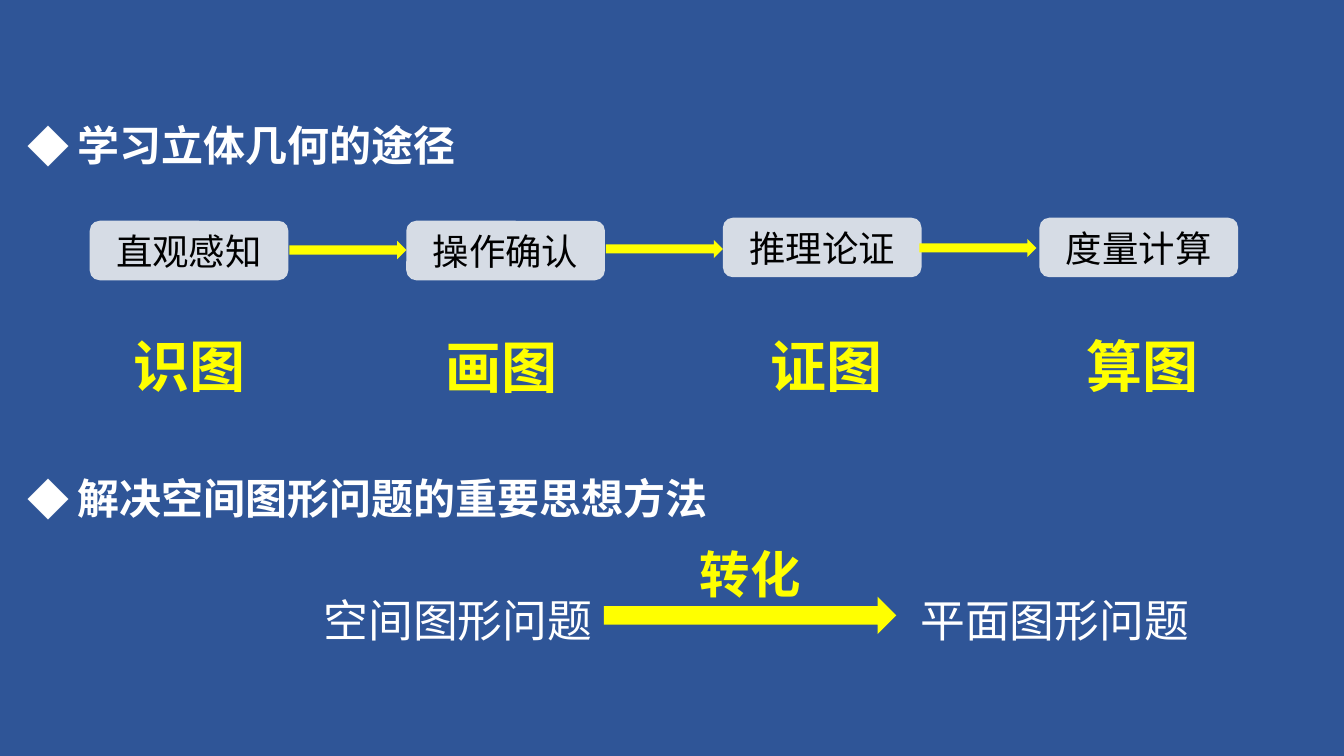
from lxml import etree
from pptx import Presentation
from pptx.dml.color import RGBColor
from pptx.enum.shapes import MSO_SHAPE
from pptx.enum.text import MSO_ANCHOR, MSO_AUTO_SIZE, PP_ALIGN
from pptx.oxml.ns import qn
from pptx.util import Inches, Pt

ROUNDED = MSO_SHAPE.ROUNDED_RECTANGLE
ARROW = MSO_SHAPE.RIGHT_ARROW
CENTER, LEFT = PP_ALIGN.CENTER, PP_ALIGN.LEFT
MIDDLE, TOP = MSO_ANCHOR.MIDDLE, MSO_ANCHOR.TOP
FIT_SHAPE = MSO_AUTO_SIZE.SHAPE_TO_FIT_TEXT

BLUE, GRAY, YELLOW = "2F5597", "D6DCE5", "FFFF00"
WHITE, BLACK, ORANGE = "FFFFFF", "000000", "ED7D31"

STEP_LEFT, STEP_PITCH = 0.89, 3.14
STEP_WIDTH, STEP_HEIGHT = 1.97, 0.59
STEPS = [("直观感知", 2.19), ("操作确认", 2.19), ("推理论证", 2.16), ("度量计算", 2.16)]
STEP_ARROWS = [(2.87, 2.39), (6.01, 2.38), (9.12, 2.37)]
SKILLS = [("识图", 1.22, 3.24), ("画图", 4.31, 3.25), ("证图", 7.54, 3.24), ("算图", 10.67, 3.24)]
HEADINGS = [("学习立体几何的途径", 0.88, 4.67), ("解决空间图形问题的重要思想方法", 4.38, 7.36)]
PROBLEMS = [("空间图形问题", 3.11), ("平面图形问题", 9.03)]


def color(value):
    return RGBColor.from_string(value)


class SlideBuilder:
    font_name = "Noto Sans CJK SC"

    def __init__(self, slide):
        self.slide = slide

    def background(self, fill):
        background_fill = self.slide.background.fill
        background_fill.solid()
        background_fill.fore_color.rgb = color(fill)

    def fill_text(self, shape, text, size, font_color, bold=False, **paragraph_format):
        paragraph = shape.text_frame.paragraphs[0]
        for name, value in paragraph_format.items():
            setattr(paragraph, name, value)
        run = paragraph.add_run()
        run.text = text
        font = run.font
        for name, value in {"name": self.font_name, "size": Pt(size), "bold": bold}.items():
            setattr(font, name, value)
        font.color.rgb = color(font_color)
        properties = run._r.get_or_add_rPr()
        etree.SubElement(properties, qn("a:ea"), typeface=self.font_name)
        return paragraph, properties

    def shape(self, kind, left, top, width, height, fill):
        shape = self.slide.shapes.add_shape(
            kind, Inches(left), Inches(top), Inches(width), Inches(height))
        shape.shadow.inherit = False
        shape.fill.solid()
        shape.fill.fore_color.rgb = color(fill)
        shape.line.fill.background()
        return shape

    def step(self, text, left, top):
        shape = self.shape(ROUNDED, left, top, STEP_WIDTH, STEP_HEIGHT, GRAY)
        shape.text_frame.vertical_anchor = MIDDLE
        self.fill_text(shape, text, 26, BLACK, alignment=CENTER)

    def text(self, text, left, top, width, height, size, font_color,
             bold=False, anchor=TOP, wrap=False, **paragraph_format):
        box = self.slide.shapes.add_textbox(
            Inches(left), Inches(top), Inches(width), Inches(height))
        frame_format = {"word_wrap": wrap, "auto_size": FIT_SHAPE, "vertical_anchor": anchor}
        for name, value in frame_format.items():
            setattr(box.text_frame, name, value)
        return self.fill_text(box, text, size, font_color, bold, **paragraph_format)

    def heading(self, text, top, width):
        paragraph, _ = self.text(text, 0.17, top, width, 0.86, 30, WHITE, bold=True,
                                 anchor=MIDDLE, wrap=True, alignment=LEFT, line_spacing=1.5)
        properties = paragraph._p.get_or_add_pPr()
        properties.set("marL", str(Inches(0.5)))
        properties.set("indent", str(Inches(-0.5)))
        etree.SubElement(properties, qn("a:buFont"), typeface=self.font_name)
        etree.SubElement(properties, qn("a:buChar"), char="◆")

    def skill(self, text, left, top):
        _, properties = self.text(text, left, top, 1.32, 0.77, 40, YELLOW,
                                  bold=True, alignment=CENTER)
        outline = etree.Element(qn("a:ln"), w=str(Pt(0.52)))
        fill = etree.SubElement(outline, qn("a:solidFill"))
        etree.SubElement(fill, qn("a:srgbClr"), val=ORANGE)
        properties.insert(0, outline)


def main():
    presentation = Presentation()
    presentation.slide_width = Inches(13.33)
    presentation.slide_height = Inches(7.5)
    builder = SlideBuilder(presentation.slides.add_slide(presentation.slide_layouts[6]))
    builder.background(BLUE)

    for text, top, width in HEADINGS:
        builder.heading(text, top, width)
    for index, (text, top) in enumerate(STEPS):
        builder.step(text, STEP_LEFT + index * STEP_PITCH, top)
    for left, top in STEP_ARROWS:
        builder.shape(ARROW, left, top, 1.16, 0.18, YELLOW)
    for text, left, top in SKILLS:
        builder.skill(text, left, top)

    for text, left in PROBLEMS:
        builder.text(text, left, 5.56, 2.87, 0.91, 32, WHITE,
                     anchor=MIDDLE, alignment=LEFT, line_spacing=1.5)
    builder.shape(ARROW, 5.99, 5.92, 2.9, 0.37, YELLOW)
    builder.text("转化", 6.84, 5.34, 1.2, 0.71, 36, YELLOW, bold=True, alignment=CENTER)

    presentation.save("out.pptx")


if __name__ == "__main__":
    main()
